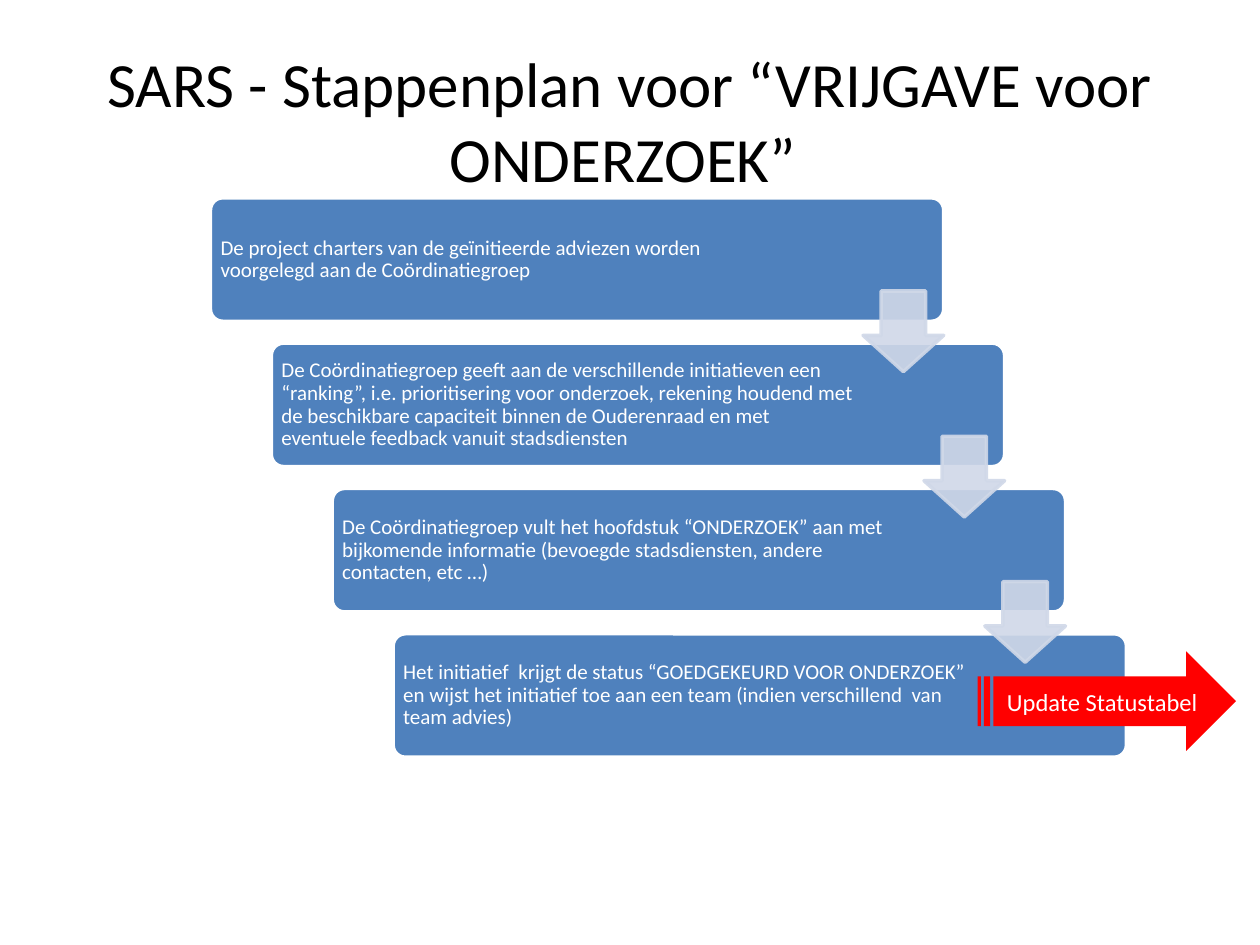
from lxml import etree
from pptx import Presentation
from pptx.dml.color import RGBColor
from pptx.enum.shapes import MSO_SHAPE
from pptx.enum.text import MSO_ANCHOR, PP_ALIGN
from pptx.oxml.ns import qn
from pptx.util import Inches, Pt

COLORS = {"step": "4F81BD", "arrow": "D0D8E8", "status": "FF0000",
          "white": "FFFFFF", "black": "000000"}
STEPS = [
    "De project charters van de geïnitieerde adviezen worden voorgelegd aan de Coördinatiegroep",
    "De Coördinatiegroep geeft aan de verschillende initiatieven een “ranking”, i.e. "
    "prioritisering voor onderzoek, rekening houdend met de beschikbare capaciteit binnen "
    "de Ouderenraad en met eventuele feedback vanuit stadsdiensten",
    "De Coördinatiegroep vult het hoofdstuk “ONDERZOEK” aan met bijkomende informatie "
    "(bevoegde stadsdiensten, andere contacten, etc …)",
    "Het initiatief  krijgt de status “GOEDGEKEURD VOOR ONDERZOEK” en wijst het initiatief "
    "toe aan een team (indien verschillend  van team advies)",
]
# Each step sits one stride right of and below the previous one
LEFT, TOP = 1.67, 1.57
STRIDE_X = (3.12 - LEFT) / 3
STRIDE_Y = (5.03 - TOP) / 3


def add_shape(kind, x, y, w, h, fill, line=None):
    sp = s.shapes.add_shape(kind, Inches(x), Inches(y), Inches(w), Inches(h))
    sp.shadow.inherit = False
    sp.fill.solid()
    sp.fill.fore_color.rgb = RGBColor.from_string(COLORS[fill])
    if line:
        sp.line.color.rgb = RGBColor.from_string(COLORS[line])
        sp.line.width = Pt(2)
    else:
        sp.line.fill.background()
    return sp


def set_text(sp, text, size, color, align=PP_ALIGN.LEFT, anchor=MSO_ANCHOR.MIDDLE):
    tf = sp.text_frame
    tf.word_wrap = True
    tf.vertical_anchor = anchor
    p = tf.paragraphs[0]
    p.text = text
    p.alignment = align
    p.font.name = "Calibri"
    p.font.size = Pt(size)
    p.font.color.rgb = RGBColor.from_string(COLORS[color])
    return tf


prs = Presentation()
prs.slide_width, prs.slide_height = Inches(10), Inches(7.5)
s = prs.slides.add_slide(prs.slide_layouts[6])

# Steps
for i, text in enumerate(STEPS):
    x, y = LEFT + i * STRIDE_X, TOP + i * STRIDE_Y
    sp = add_shape(MSO_SHAPE.ROUNDED_RECTANGLE, x, y, 5.82, 0.98, "step", "white")
    sp.adjustments[0] = 0.1
    width = 4.68 if i == 0 else 4.64
    box = s.shapes.add_textbox(Inches(x + 0.03), Inches(y + 0.03), Inches(width), Inches(0.92))
    tf = set_text(box, text, 12, "white")
    tf.margin_left = tf.margin_right = tf.margin_top = tf.margin_bottom = Inches(0.05)
    tf.paragraphs[0].line_spacing = 0.9
    tf.paragraphs[0].space_after = Pt(4.2)

# Slightly transparent arrows from each step to the next
for i in range(len(STEPS) - 1):
    sp = add_shape(MSO_SHAPE.DOWN_ARROW, 6.85 + i * STRIDE_X, 2.31 + i * STRIDE_Y,
                   0.64, 0.64, "arrow", "arrow")
    sp.adjustments[0], sp.adjustments[1] = 0.55, 0.45
    for clr in sp._element.spPr.iter(qn("a:srgbClr")):
        etree.SubElement(clr, qn("a:alpha"), val="90000")

# Title
title = s.shapes.add_textbox(Inches(0.5), Inches(0.3), Inches(9), Inches(1.25))
set_text(title, "SARS - Stappenplan voor “VRIJGAVE voor ONDERZOEK” ", 36, "black",
         PP_ALIGN.CENTER, MSO_ANCHOR.TOP)

# Status update
status = add_shape(MSO_SHAPE.STRIPED_RIGHT_ARROW, 7.76, 5.17, 2.05, 0.79, "status")
set_text(status, "Update Statustabel", 14, "white", PP_ALIGN.CENTER)

prs.save("out.pptx")
